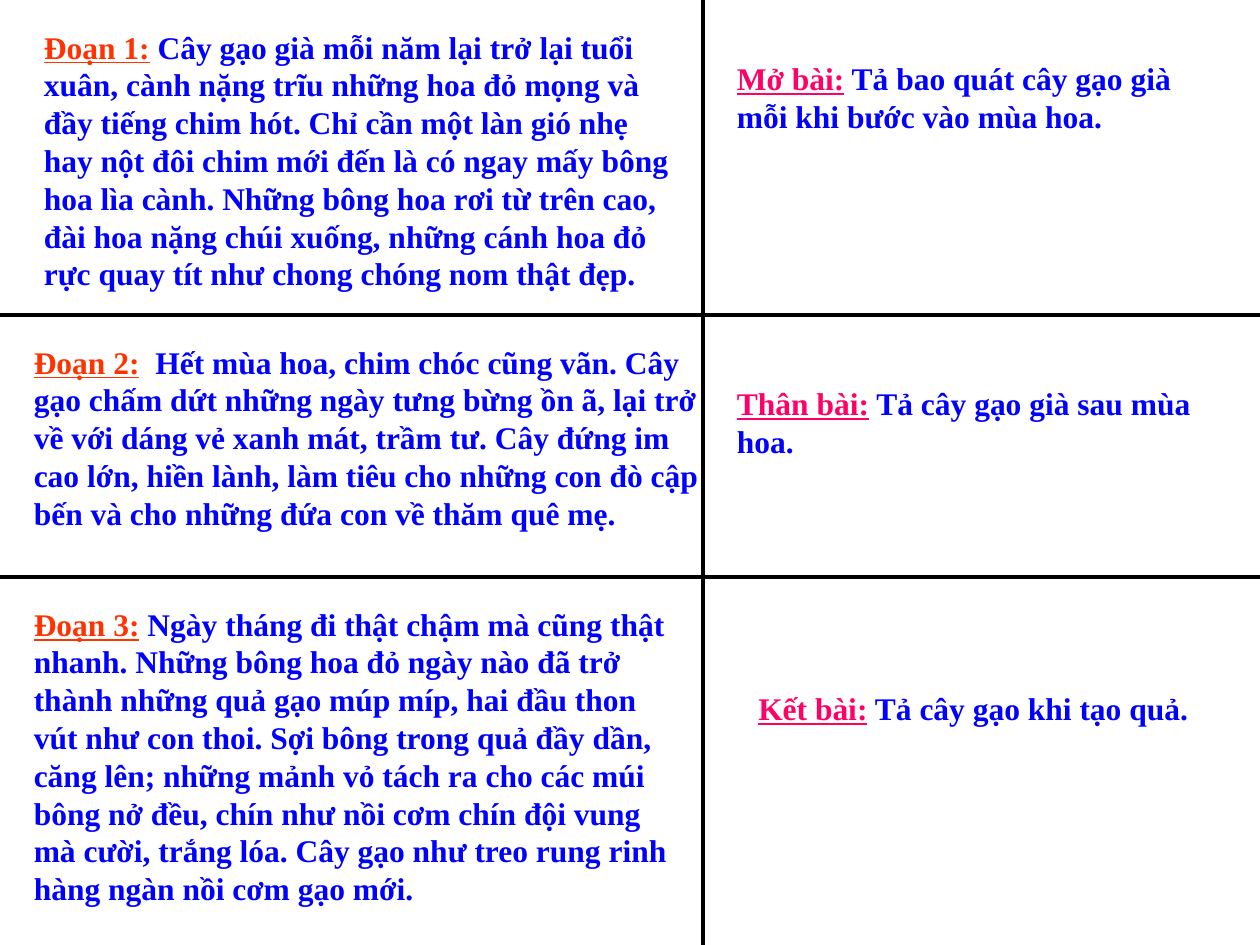
from lxml import etree
from pptx import Presentation
from pptx.dml.color import RGBColor
from pptx.enum import shapes, text
from pptx.oxml.ns import qn
from pptx.util import Inches, Pt

COLOURS = {
    "passage": "FF3300",
    "summary": "FF0066",
    "body": "0000FF",
    "rule": "000000",
}

# left, top, width, height, label, body
PASSAGES = [
    (0.25, 0.17, 5.17, 2.2, "Đoạn 1:",
     " Cây gạo già mỗi năm lại trở lại tuổi xuân, cành nặng trĩu những hoa đỏ "
     "mọng và đầy tiếng chim hót. Chỉ cần một làn gió nhẹ hay nột đôi chim mới "
     "đến là có ngay mấy bông hoa lìa cành. Những bông hoa rơi từ trên cao, đài "
     "hoa nặng chúi xuống, những cánh hoa đỏ rực quay tít như chong chóng nom "
     "thật đẹp."),
    (0.17, 2.67, 5.5, 1.6, "Đoạn 2:",
     "  Hết mùa hoa, chim chóc cũng vãn. Cây gạo chấm dứt những ngày tưng bừng "
     "ồn ã, lại trở về với dáng vẻ xanh mát, trầm tư. Cây đứng im cao lớn, hiền "
     "lành, làm tiêu cho những con đò cập bến và cho những đứa con về thăm quê "
     "mẹ."),
    (0.17, 4.75, 5.33, 2.5, "Đoạn 3:",
     " Ngày tháng đi thật chậm mà cũng thật nhanh. Những bông hoa đỏ ngày nào đã "
     "trở thành những quả gạo múp míp, hai đầu thon vút như con thoi. Sợi bông "
     "trong quả đầy dần, căng lên; những mảnh vỏ tách ra cho các múi bông nở "
     "đều, chín như nồi cơm chín đội vung mà cười, trắng lóa. Cây gạo như treo "
     "rung rinh hàng ngàn nồi cơm gạo mới."),
]
SUMMARIES = [
    (5.75, 0.42, 3.67, 0.7, "Mở bài:",
     " Tả bao quát cây gạo già mỗi khi bước vào mùa hoa."),
    (5.75, 3, 4.08, 0.7, "Thân bài:", " Tả cây gạo già sau mùa hoa."),
    (5.92, 5.42, 3.83, 0.4, "Kết bài:", " Tả cây gạo khi tạo quả."),
]

WIDTH, HEIGHT = 10, 7.5
COLUMN_EDGE = 5.58
ROW_EDGES = (2.5, 4.58)


class PageBuilder:
    """Holds the shared style and the page being filled."""

    font = "Times New Roman"
    size = Pt(18)
    rule_width = Pt(2.25)

    def __init__(self, page):
        self.page = page

    def rule(self, x1, y1, x2, y2):
        line = self.page.shapes.add_connector(
            shapes.MSO_CONNECTOR.STRAIGHT,
            Inches(x1), Inches(y1), Inches(x2), Inches(y2))
        line.line.color.rgb = RGBColor.from_string(COLOURS["rule"])
        line.line.width = self.rule_width
        etree.SubElement(line._element.spPr, qn("a:effectLst"))

    def span(self, para, words, colour, underline=False):
        span = para.add_run()
        span.text = words
        span.font.name = self.font
        span.font.size = self.size
        span.font.bold = True
        span.font.underline = underline
        span.font.color.rgb = RGBColor.from_string(COLOURS[colour])

    def labelled_text(self, left, top, width, height, label, body, label_colour):
        """Add a text box that opens with an underlined label."""
        box = self.page.shapes.add_textbox(
            Inches(left), Inches(top), Inches(width), Inches(height))
        frame = box.text_frame
        frame.word_wrap = True
        frame.auto_size = text.MSO_AUTO_SIZE.SHAPE_TO_FIT_TEXT
        para = frame.paragraphs[0]
        self.span(para, label, label_colour, underline=True)
        self.span(para, body, "body")


def main():
    deck = Presentation()
    deck.slide_width, deck.slide_height = Inches(WIDTH), Inches(HEIGHT)
    blank_layout = deck.slide_layouts[6]
    builder = PageBuilder(deck.slides.add_slide(blank_layout))

    for passage in PASSAGES:
        builder.labelled_text(*passage, "passage")
    builder.rule(COLUMN_EDGE, 0, COLUMN_EDGE, HEIGHT)
    for edge in ROW_EDGES:
        builder.rule(0, edge, WIDTH, edge)
    for summary in SUMMARIES:
        builder.labelled_text(*summary, "summary")

    deck.save("out.pptx")


if __name__ == "__main__":
    main()
